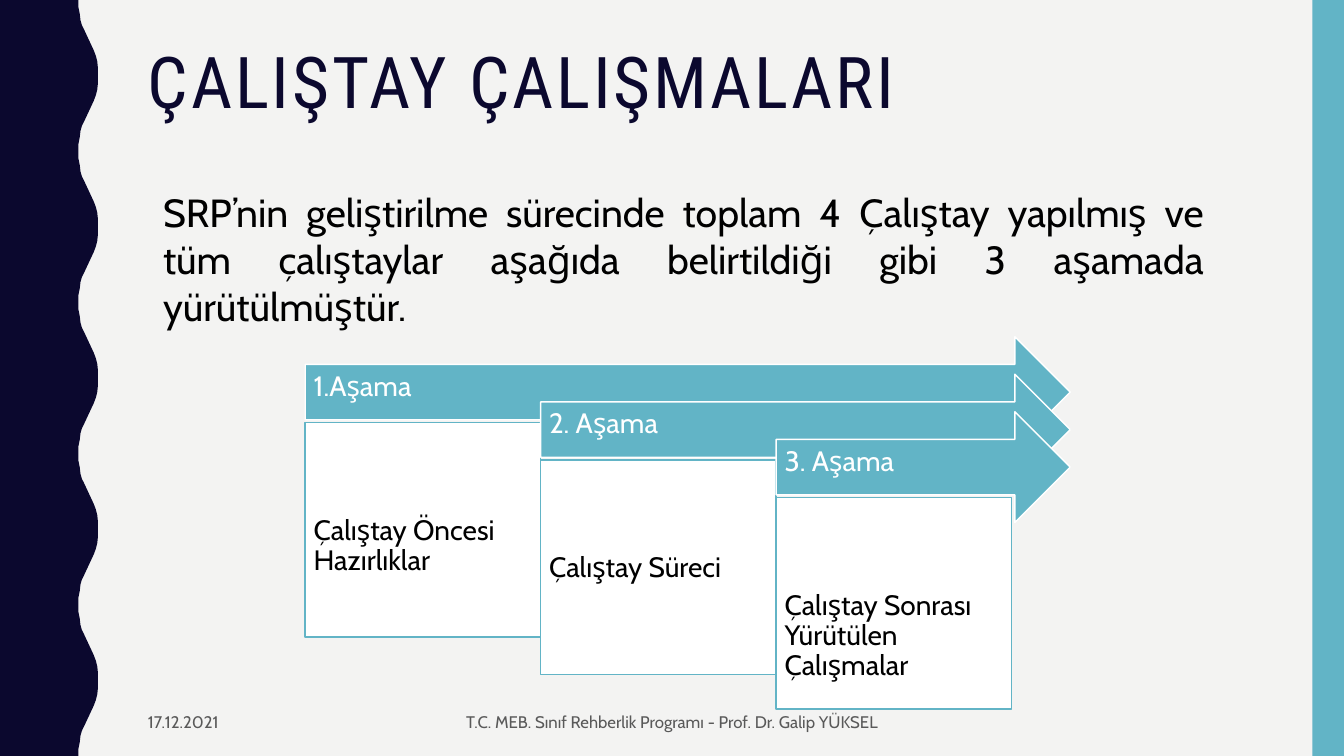
from collections import namedtuple

from lxml import etree
from pptx import Presentation
from pptx.dml.color import RGBColor
from pptx.enum.shapes import MSO_SHAPE as Preset
from pptx.enum.text import MSO_ANCHOR as Anchor, PP_ALIGN as Align
from pptx.util import Pt

Box = namedtuple("Box", "left top width height")

COLORS = {
    "paper": "F3F3F2",
    "navy": "0B082E",
    "teal": "62B4C6",
    "white": "FFFFFF",
    "black": "000000",
    "gray": "595959",
}
STAGES = [
    ("1.Aşama", "Çalıştay Öncesi Hazırlıklar", 153.4),
    ("2. Aşama", "Çalıştay Süreci", 153.4),
    ("3. Aşama", "Çalıştay Sonrası Yürütülen Çalışmalar", 151.2),
]
HALF_WAVE = [
    (56, 0), (56, 5), (57, 10), (57.5, 14.5), (58.5, 18), (60, 21),
    (67, 36), (68.5, 40), (69.5, 44), (70, 49), (70, 54),
]
WAVE_PERIOD = 108


def color(name):
    """Return the named palette colour."""
    return RGBColor.from_string(COLORS[name])


def points(box):
    """Convert a box to lengths in points."""
    return [Pt(value) for value in box]


def paint(shape, fill, line=None):
    """Set the fill and outline of a shape and remove its shadow."""
    shape.shadow.inherit = False
    shape.fill.solid()
    shape.fill.fore_color.rgb = color(fill)
    if line:
        shape.line.color.rgb = color(line)
        shape.line.width = Pt(1)
    else:
        shape.line.fill.background()


def write(shape, text, size=20, font="Cabin", ink="black", align=Align.LEFT,
          anchor=Anchor.TOP, insets=(7.2, 3.6, 7.2, 3.6), leading=1.0, tracking=0):
    """Put one formatted paragraph into a shape."""
    frame = shape.text_frame
    frame.word_wrap = True
    frame.vertical_anchor = anchor
    (frame.margin_left, frame.margin_top,
     frame.margin_right, frame.margin_bottom) = points(insets)
    para = frame.paragraphs[0]
    para.alignment = align
    para.line_spacing = leading
    span = para.add_run()
    span.text = text
    span.font.size = Pt(size)
    span.font.name = font
    span.font.color.rgb = color(ink)
    if tracking:
        span.font._element.set("spc", str(tracking * 100))


def add_text(page, box, text, **style):
    """Add a text box with formatted text."""
    write(page.shapes.add_textbox(*points(box)), text, **style)


def add_wave(page, box):
    """Draw the wavy left edge down the height of the box."""
    period = HALF_WAVE + [(x, WAVE_PERIOD - y) for x, y in reversed(HALF_WAVE[:-1])]
    edge = [(x, y + start) for start in range(0, box.height, WAVE_PERIOD)
            for x, y in period]
    outline = [(Pt(box.left + x), Pt(box.top + y))
               for x, y in edge + [(0, box.height)]]
    builder = page.shapes.build_freeform(Pt(box.left), Pt(box.top), scale=1.0)
    builder.add_line_segments(outline, close=True)
    paint(builder.convert_to_shape(), "navy")


def add_band(page, box):
    """Draw the plain band on the right edge."""
    paint(page.shapes.add_shape(Preset.RECTANGLE, *points(box)), "teal")


def add_stages(page, box):
    """Draw the overlapping stage arrows with a card under each."""
    step_x, step_y, arrow_height, card_drop = 168.2, 26.8, 79.2, 61.2
    for index, (label, detail, card_height) in enumerate(STAGES):
        left = box.left + index * step_x
        top = box.top + index * step_y
        arrow_box = Box(left, top, box.left + box.width - left, arrow_height)
        arrow = page.shapes.add_shape(Preset.RIGHT_ARROW, *points(arrow_box))
        paint(arrow, "teal", "white")
        write(arrow, label, ink="white", anchor=Anchor.MIDDLE, leading=0.9,
              insets=(6, 6, 20, 13))
        card_box = Box(left, top + card_drop, step_x, card_height)
        card = page.shapes.add_shape(Preset.RECTANGLE, *points(card_box))
        paint(card, "white", "teal")
        write(card, detail, leading=0.9, insets=(6, 67, 6, 6))


def add_footer(page, box):
    """Place the date and the centred footer line."""
    style = {"size": 12, "ink": "gray", "anchor": Anchor.MIDDLE}
    add_text(page, Box(box.left, box.top, 183.6, box.height), "17.12.2021", **style)
    add_text(page, Box(box.left + 219.6, box.top, 324, box.height),
             "T.C. MEB. Sınıf Rehberlik Programı - Prof. Dr. Galip YÜKSEL",
             align=Align.CENTER, **style)


def build_slide(deck):
    """Build the workshop slide."""
    page = deck.slides.add_slide(deck.slide_layouts[6])
    page.background.fill.solid()
    page.background.fill.fore_color.rgb = color("paper")
    add_wave(page, Box(0, 0, 70, 540))
    add_band(page, Box(937.5, 0, 22.5, 540))
    add_text(page, Box(98.6, 30.2, 801.4, 72.7), "ÇALIŞTAY ÇALIŞMALARI", size=51,
             font="Roboto Condensed", ink="navy", leading=0.9, tracking=2)
    add_stages(page, Box(218, 240.5, 546.5, 265.6))
    add_footer(page, Box(98.6, 501.8, 543.6, 27.4))
    add_text(page, Box(109.4, 131, 757.4, 109),
             "SRP’nin geliştirilme sürecinde toplam 4 Çalıştay yapılmış ve tüm "
             "çalıştaylar aşağıda belirtildiği gibi 3 aşamada yürütülmüştür.",
             size=28, align=Align.JUSTIFY)


def main():
    """Create and save the deck."""
    deck = Presentation()
    deck.slide_width, deck.slide_height = Pt(960), Pt(540)
    build_slide(deck)
    deck.save("out.pptx")


if __name__ == "__main__":
    main()
